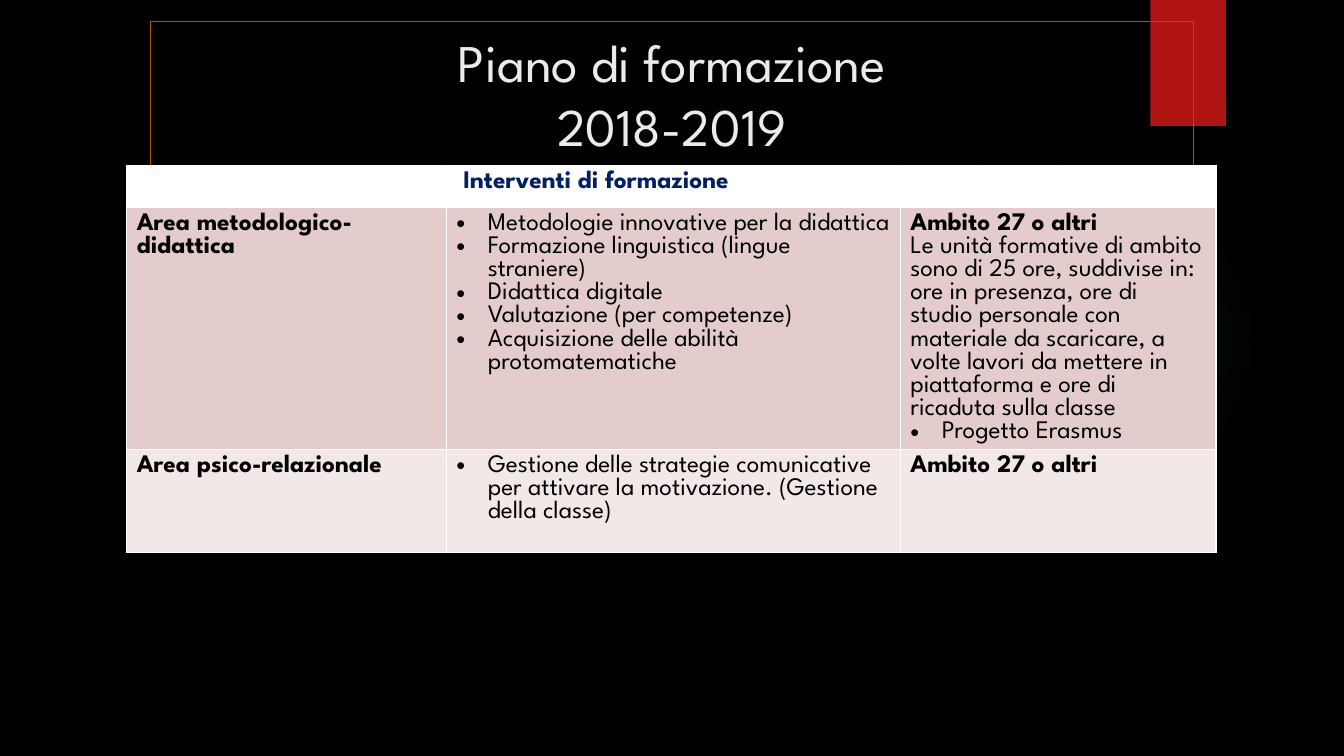
from dataclasses import dataclass

from lxml import etree
from pptx import Presentation
from pptx import util as u
from pptx.dml.color import RGBColor
from pptx.enum import shapes, text
from pptx.oxml import ns


@dataclass(frozen=True)
class Theme:
    font: str = "League Spartan"
    title_size: float = 37.8
    title_pitch: float = 45.7
    body_size: float = 18
    background: str = "000000"
    glow: str = "50B9C1"
    ribbon: str = "B01513"
    frame: str = "B04A0D"
    title: str = "EBEBEB"
    heading: str = "002060"
    body: str = "000000"
    grid: str = "FFFFFF"
    bands: tuple = ("FFFFFF", "E4CCCC", "F2E8E7")


def sub(parent, tag, **attributes):
    return etree.SubElement(parent, ns.qn(tag), attributes)


def solid(fill, color):
    fill.solid()
    fill.fore_color.rgb = RGBColor.from_string(color)


class Deck:
    def __init__(self, theme):
        self.theme = theme
        self.show = Presentation()
        self.show.slide_width, self.show.slide_height = u.Pt(960), u.Pt(540)
        self.slide = self.show.slides.add_slide(self.show.slide_layouts[6])
        solid(self.slide.background.fill, theme.background)

    def shape(self, kind, box, fill=None, line=None):
        item = self.slide.shapes.add_shape(kind, *map(u.Pt, box))
        item.shadow.inherit = False
        if fill:
            solid(item.fill, fill)
        else:
            item.fill.background()
        if line:
            solid(item.line.fill, line)
            item.line.width = u.Pt(0.75)
        else:
            item.line.fill.background()
        return item

    def glow(self, box, stops):
        halo = self.shape(shapes.MSO_SHAPE.OVAL, box)
        properties = halo.element.spPr
        blank = properties.find(ns.qn("a:noFill"))
        gradient = etree.Element(ns.qn("a:gradFill"))
        stop_list = sub(gradient, "a:gsLst")
        for position, opacity in stops:
            stop = sub(stop_list, "a:gs", pos=str(position * 1000))
            color = sub(stop, "a:srgbClr", val=self.theme.glow)
            sub(color, "a:alpha", val=str(opacity * 1000))
        center = sub(gradient, "a:path", path="circle")
        sub(center, "a:fillToRect", **dict.fromkeys("ltrb", "50000"))
        properties.replace(blank, gradient)

    def style(self, paragraph, size, color, bold=False):
        paragraph.font.color.rgb = RGBColor.from_string(color)
        values = {"name": self.theme.font, "size": u.Pt(size), "bold": bold}
        for name, value in values.items():
            setattr(paragraph.font, name, value)

    def title(self, box, wording):
        frame = self.shape(shapes.MSO_SHAPE.RECTANGLE, box, line=self.theme.frame).text_frame
        frame.word_wrap = True
        frame.vertical_anchor = text.MSO_ANCHOR.MIDDLE
        heading = frame.paragraphs[0]
        heading.text = wording
        heading.alignment = text.PP_ALIGN.CENTER
        heading.line_spacing = u.Pt(self.theme.title_pitch)
        self.style(heading, self.theme.title_size, self.theme.title)

    def cell(self, cell, entries, band):
        properties = cell._tc.get_or_add_tcPr()
        for side in ("a:lnL", "a:lnR", "a:lnT", "a:lnB"):
            edge = sub(properties, side, w=str(u.Pt(1)))
            sub(sub(edge, "a:solidFill"), "a:srgbClr", val=self.theme.grid)
        solid(cell.fill, band)
        for index, (kind, wording) in enumerate(entries):
            frame = cell.text_frame
            paragraph = frame.add_paragraph() if index else frame.paragraphs[0]
            paragraph.text = wording
            layout = paragraph._p.get_or_add_pPr()
            if kind == "bullet":
                layout.set("marL", str(u.Pt(22.5)))
                layout.set("indent", str(u.Pt(-22.5)))
                sub(layout, "a:buFont", typeface="Arial")
                sub(layout, "a:buChar", char="•")
            elif kind == "heading":
                layout.set("marL", str(u.Pt(5)))
            color = self.theme.heading if kind == "heading" else self.theme.body
            self.style(paragraph, self.theme.body_size, color, kind in ("heading", "bold"))

    def table(self, corner, widths, heights, rows, merged):
        box = (*corner, sum(widths), sum(heights))
        grid = self.slide.shapes.add_table(len(heights), len(widths), *map(u.Pt, box)).table
        for column, width in zip(grid.columns, widths):
            column.width = u.Pt(width)
        for row, height in zip(grid.rows, heights):
            row.height = u.Pt(height)
        for r, band in enumerate(self.theme.bands):
            for c in range(len(widths)):
                entries = rows[r][c] if c < len(rows[r]) else []
                self.cell(grid.cell(r, c), entries, band)
        for r, first, last in merged:
            grid.cell(r, first).merge(grid.cell(r, last))


def main():
    methods = [
        "Metodologie innovative per la didattica",
        "Formazione linguistica (lingue straniere)",
        "Didattica digitale",
        "Valutazione (per competenze)",
        "Acquisizione delle abilità protomatematiche",
    ]
    units = (
        "Le unità formative di ambito sono di 25 ore, suddivise in: ore in presenza, "
        "ore di studio personale con materiale da scaricare, a volte lavori da "
        "mettere in piattaforma e ore di ricaduta sulla classe"
    )
    relations = (
        "Gestione delle strategie comunicative per attivare la motivazione. "
        "(Gestione della classe)"
    )
    district = ("bold", "Ambito 27 o altri")
    plan = [
        [[], [("heading", "Interventi di formazione")]],
        [
            [("bold", "Area metodologico-didattica")],
            [("bullet", method) for method in methods],
            [district, ("plain", units), ("bullet", "Progetto Erasmus")],
        ],
        [[("bold", "Area psico-relazionale")], [("bullet", relations)], [district]],
    ]
    deck = Deck(Theme())
    deck.glow((677.5, 131.8, 221.8, 221.8), [(0, 7), (36, 6), (69, 0), (100, 0)])
    deck.shape(shapes.MSO_SHAPE.RECTANGLE, (821.7, 0, 54, 90), fill=deck.theme.ribbon)
    deck.title((107.3, 15.5, 745.2, 102.5), "Piano di formazione\v2018-2019")
    deck.table(
        (90.5, 118.1),
        (228.3, 324.3, 56.2, 56.2, 113.2),
        (30, 156, 73.3),
        plan,
        [(1, 2, 4), (2, 2, 4)],
    )
    deck.show.save("out.pptx")


if __name__ == "__main__":
    main()
